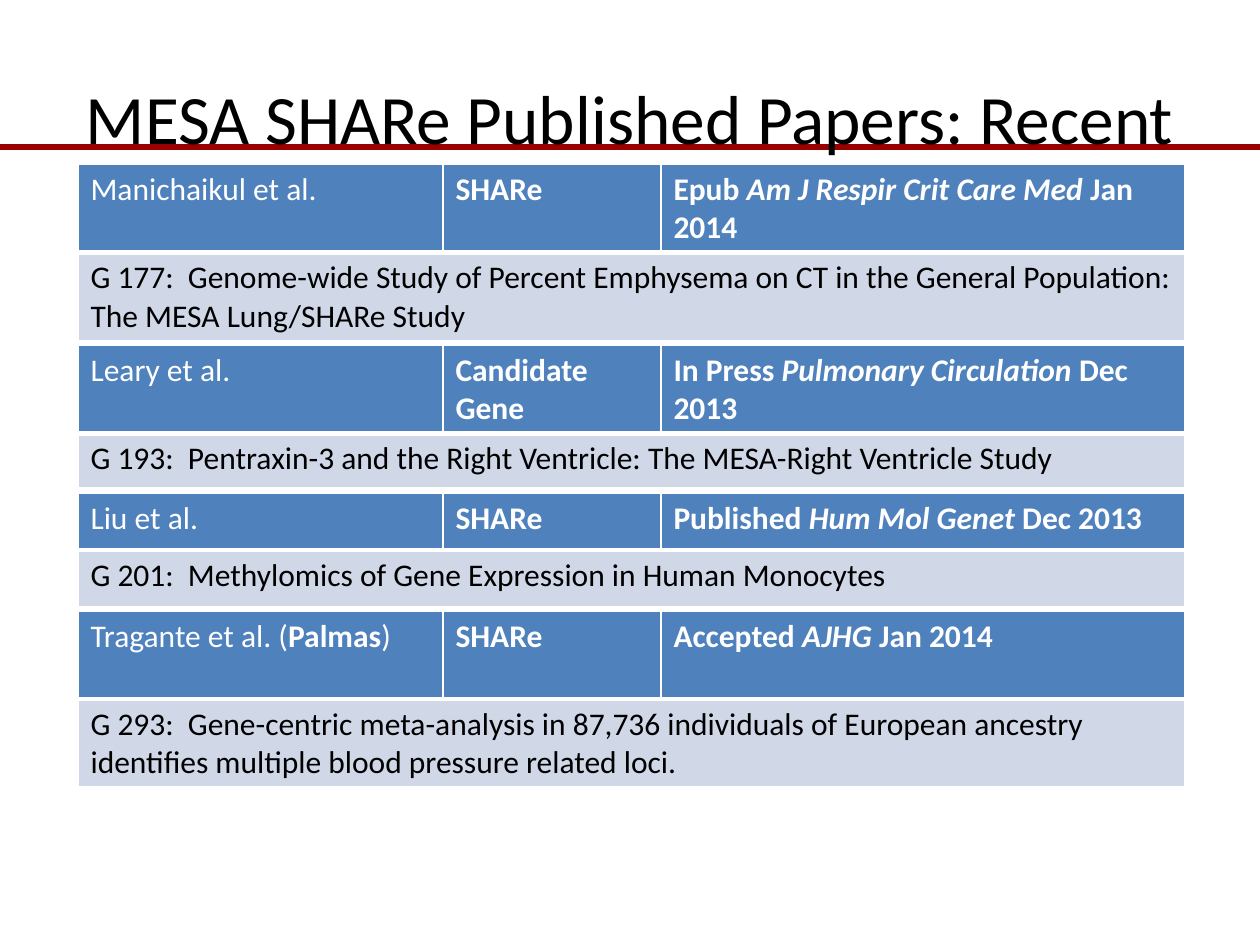
from lxml import etree
from pptx import Presentation
from pptx.dml.color import RGBColor
from pptx.enum.shapes import MSO_CONNECTOR
from pptx.enum.text import MSO_ANCHOR, PP_ALIGN
from pptx.oxml.ns import qn
from pptx.util import Pt

STRAIGHT = MSO_CONNECTOR.STRAIGHT
MIDDLE = MSO_ANCHOR.MIDDLE
CENTER = PP_ALIGN.CENTER

PX = 914400 / 126
FONT = "Calibri"
COLORS = {"rule": "990000", "head": "4F81BD", "body": "D0D8E8",
          "light": "FFFFFF", "dark": "000000"}
PLAIN, BOLD, SLANT = {}, {"bold": True}, {"bold": True, "italic": True}

TITLE = "MESA SHARe Published Papers: Recent"
LEFT = 78
COLS = (365, 218, 524)
# Each paper: top, row heights, head cells as lists of runs, paper title
PAPERS = [
    (164, (88, 88),
     [[("Manichaikul et al.", PLAIN)],
      [("SHARe", BOLD)],
      [("Epub ", BOLD), ("Am J Respir Crit Care Med", SLANT), (" Jan 2014", BOLD)]],
     "G 177:  Genome-wide Study of Percent Emphysema on CT in the General "
     "Population: The MESA Lung/SHARe Study"),
    (345, (88, 55),
     [[("Leary et al.", PLAIN)],
      [("Candidate Gene", BOLD)],
      [("In Press ", BOLD), ("Pulmonary Circulation ", SLANT), ("Dec 2013", BOLD)]],
     "G 193:  Pentraxin-3 and the Right Ventricle: The MESA-Right Ventricle Study"),
    (493, (57, 57),
     [[("Liu et al.", PLAIN)],
      [("SHARe", BOLD)],
      [("Published ", BOLD), ("Hum Mol Genet ", SLANT), ("Dec 2013", BOLD)]],
     "G 201:  Methylomics of Gene Expression in Human Monocytes"),
    (611, (88, 88),
     [[("Tragante et al. (", PLAIN), ("Palmas", BOLD), (")", PLAIN)],
      [("SHARe", BOLD)],
      [("Accepted ", BOLD), ("AJHG ", SLANT), ("Jan 2014", BOLD)]],
     "G 293:  Gene-centric meta-analysis in 87,736 individuals of European "
     "ancestry identifies multiple blood pressure related loci."),
]


def px(*vals):
    """Turn px lengths into EMU."""
    return [round(v * PX) for v in vals]


def rgb(name):
    return RGBColor.from_string(COLORS[name])


def write(frame, runs, size, color):
    para = frame.paragraphs[0]
    for text, style in runs:
        run = para.add_run()
        run.text = text
        run.font.color.rgb = rgb(color)
        for key, val in {"name": FONT, "size": Pt(size), **style}.items():
            setattr(run.font, key, val)
    return para


def edge(cell, base):
    """Draw white cell borders, 1 pt except the bottom one."""
    props = cell._tc.get_or_add_tcPr()
    for spot, (side, width) in enumerate(zip("LRTB", (1, 1, 1, base))):
        line = etree.Element(qn(f"a:ln{side}"), w=str(Pt(width)))
        fill = etree.SubElement(line, qn("a:solidFill"))
        etree.SubElement(fill, qn("a:srgbClr"), val=COLORS["light"])
        props.insert(spot, line)


def add_paper(slide, top, rows, heads, name):
    box = px(LEFT, top, sum(COLS), sum(rows))
    table = slide.shapes.add_table(2, len(COLS), *box).table
    table.first_row = table.horz_banding = False
    for col, width in zip(table.columns, px(*COLS)):
        col.width = width
    for row, height, color, base in zip(table.rows, px(*rows), ("head", "body"), (3, 1)):
        row.height = height
        for cell in row.cells:
            cell.fill.solid()
            cell.fill.fore_color.rgb = rgb(color)
            edge(cell, base)
    table.cell(1, 0).merge(table.cell(1, len(COLS) - 1))
    for col, runs in enumerate(heads):
        write(table.cell(0, col).text_frame, runs, 18, "light")
    write(table.cell(1, 0).text_frame, [(name, PLAIN)], 18, "dark")


def main():
    deck = Presentation()
    deck.slide_width, deck.slide_height = px(1260, 945)
    slide = deck.slides.add_slide(deck.slide_layouts[6])

    rule = slide.shapes.add_connector(STRAIGHT, *px(0, 147, 1260, 147))
    rule.line.color.rgb = rgb("rule")
    rule.line.width = Pt(3)
    etree.SubElement(rule._element.spPr, qn("a:effectLst"))

    frame = slide.shapes.add_textbox(*px(63, 38, 1134, 157)).text_frame
    frame.word_wrap = True
    frame.vertical_anchor = MIDDLE
    write(frame, [(TITLE, PLAIN)], 39.6, "dark").alignment = CENTER

    for paper in PAPERS:
        add_paper(slide, *paper)
    deck.save("out.pptx")


if __name__ == "__main__":
    main()
